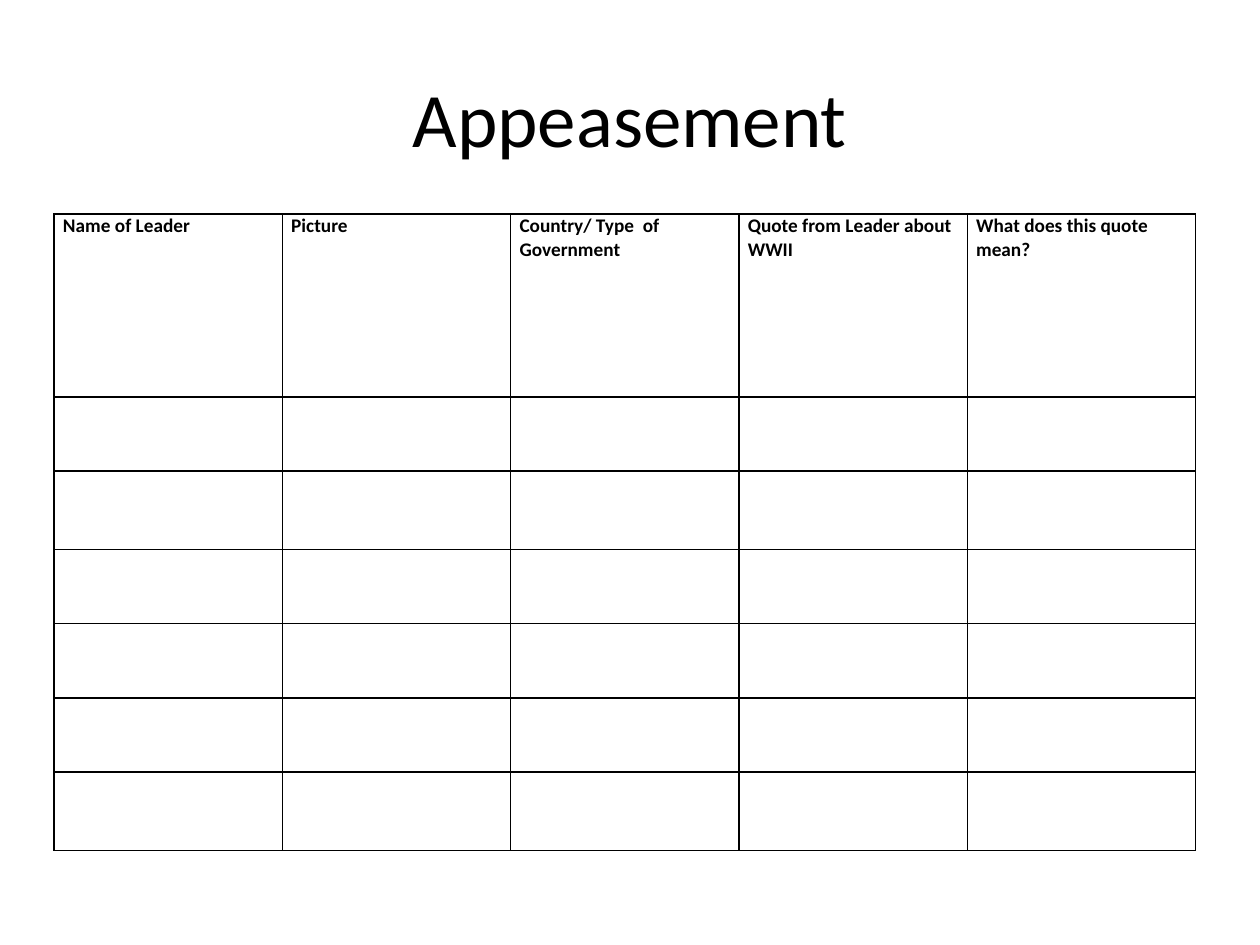
from dataclasses import dataclass

from pptx import Presentation
from pptx.dml.color import RGBColor
from pptx.enum.text import MSO_ANCHOR, PP_ALIGN
from pptx.oxml.ns import qn
from pptx.util import Inches, Pt
from lxml.etree import SubElement


@dataclass(frozen=True)
class Theme:
    font: str = "Calibri"
    ink: str = "000000"
    paper: str = "FFFFFF"
    title: int = 44
    head: int = 11
    rule: int = 1


class Deck:
    def __init__(self, theme):
        self.theme = theme
        self.show = Presentation()
        self.show.slide_width = Inches(10)
        self.show.slide_height = Inches(7.5)
        self.slide = self.show.slides.add_slide(self.show.slide_layouts[5])

    def add_text(self, para, text, size, bold=False):
        run = para.add_run()
        run.text = text
        font = run.font
        font.name = self.theme.font
        font.size = Pt(size)
        font.bold = bold
        font.color.rgb = RGBColor.from_string(self.theme.ink)

    def title(self, text, left, top, width, height):
        box = self.slide.shapes.title
        box.left, box.top = Inches(left), Inches(top)
        box.width, box.height = Inches(width), Inches(height)
        frame = box.text_frame
        frame.vertical_anchor = MSO_ANCHOR.MIDDLE
        para = frame.paragraphs[0]
        para.alignment = PP_ALIGN.CENTER
        self.add_text(para, text, self.theme.title)

    def border(self, cell):
        props = cell._tc.get_or_add_tcPr()
        for index, side in enumerate(("lnL", "lnR", "lnT", "lnB")):
            line = SubElement(props, qn(f"a:{side}"), w=str(Pt(self.theme.rule)))
            fill = SubElement(line, qn("a:solidFill"))
            SubElement(fill, qn("a:srgbClr"), val=self.theme.ink)
            props.insert(index, line)

    def table(self, heads, left, top, width, rows):
        frame = self.slide.shapes.add_table(
            len(rows), len(heads), Inches(left), Inches(top),
            Inches(width), Inches(sum(rows)))
        grid = frame.table
        grid.first_row = False
        grid.horz_banding = False
        for col in grid.columns:
            col.width = Inches(width / len(heads))
        for row, height in zip(grid.rows, rows):
            row.height = Inches(height)
        for cell in grid.iter_cells():
            cell.margin_left = cell.margin_right = Inches(0.07)
            cell.margin_top = cell.margin_bottom = 0
            cell.fill.solid()
            cell.fill.fore_color.rgb = RGBColor.from_string(self.theme.paper)
            self.border(cell)
        for cell, text in zip(grid.rows[0].cells, heads):
            para = cell.text_frame.paragraphs[0]
            self.add_text(para, text, self.theme.head, True)


def main():
    deck = Deck(Theme())
    deck.title("Appeasement", 0.5, 0.3, 9, 1.25)
    heads = [
        "Name of Leader",
        "Picture",
        "Country/ Type  of Government",
        "Quote from Leader about WWII",
        "What does this quote mean?",
    ]
    rows = [1.45, 0.59, 0.62, 0.59, 0.59, 0.59, 0.62]
    deck.table(heads, 0.43, 1.7, 9.06, rows)
    deck.show.save("out.pptx")


if __name__ == "__main__":
    main()
